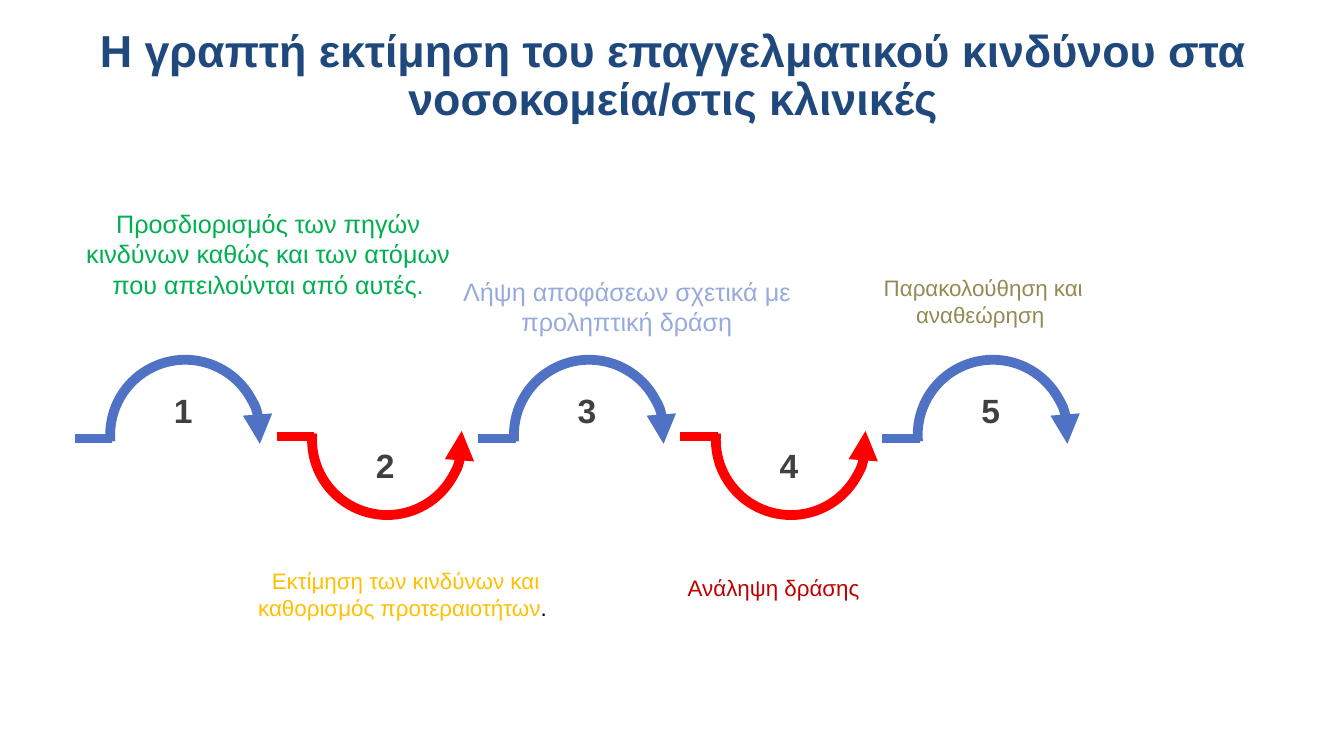
from lxml.etree import SubElement
from pptx import Presentation
from pptx.dml.color import RGBColor
from pptx.enum.shapes import MSO_CONNECTOR, MSO_SHAPE
from pptx.enum.text import MSO_ANCHOR, PP_ALIGN
from pptx.oxml.ns import qn
from pptx.util import Pt

NAVY = RGBColor(0x1F, 0x49, 0x7D)
BLUE = RGBColor(0x50, 0x72, 0xC4)
RED = RGBColor(0xFF, 0x00, 0x00)
GRAY = RGBColor(0x40, 0x40, 0x40)
GREEN = RGBColor(0x00, 0xB0, 0x50)
AMBER = RGBColor(0xFF, 0xC0, 0x00)
LIGHT_BLUE = RGBColor(0x96, 0xAA, 0xDC)
DARK_RED = RGBColor(0xC0, 0x00, 0x00)
OLIVE = RGBColor(0x94, 0x8A, 0x54)
BLACK = RGBColor(0x00, 0x00, 0x00)

TITLE = "Η γραπτή εκτίμηση του επαγγελματικού κινδύνου στα νοσοκομεία/στις κλινικές"

# Step captions: left, top, width, height, size, runs of (text, colour)
CAPTIONS = [
    (46.1, 145.4, 290.9, 72.7, 18,
     [("Προσδιορισμός των πηγών κινδύνων καθώς και των ατόμων που απειλούνται από αυτές.", GREEN)]),
    (146.9, 401.8, 285.8, 46.1, 16,
     [("Εκτίμηση των κινδύνων και καθορισμός προτεραιοτήτων", AMBER), (". ", BLACK)]),
    (321.1, 193.7, 253.4, 51.1, 18,
     [("Λήψη αποφάσεων σχετικά με προληπτική δράση", LIGHT_BLUE)]),
    (483.1, 406.8, 139, 26.6, 16, [("Ανάληψη δράσης", DARK_RED)]),
    (594.7, 192.2, 215.3, 46.1, 16, [("Παρακολούθηση και αναθεώρηση ", OLIVE)]),
]

FIRST_ARC_LEFT = 78.7
STEP_PITCH = 144.2
ARC_SIZE = 107.3
LINE_WIDTH = 7

# Alternating steps: the arc opens down (upper) or up (lower)
UPPER = {"color": BLUE, "arc_top": 257, "line_y": 313.2, "number_top": 275, "flips": ("flipH",)}
LOWER = {"color": RED, "arc_top": 260.6, "line_y": 311.8, "number_top": 314, "flips": ("flipH", "flipV")}


def apply_format(target, values):
    for name, value in values.items():
        setattr(target, name, value)


def add_text(slide, box, runs, size, bold=False, frame_format=None, paragraph_format=None):
    text_box = slide.shapes.add_textbox(*map(Pt, box))
    frame = text_box.text_frame
    apply_format(frame, {"word_wrap": True, **(frame_format or {})})
    paragraph = frame.paragraphs[0]
    apply_format(paragraph, {"alignment": PP_ALIGN.CENTER, **(paragraph_format or {})})
    for text, color in runs:
        run = paragraph.add_run()
        run.text = text
        apply_format(run.font, {"name": "Arial", "size": Pt(size), "bold": bold})
        run.font.color.rgb = color


def style_line(line, color):
    line.color.rgb = color
    line.width = Pt(LINE_WIDTH)


def add_arc_arrow(slide, left, top, color, flips):
    arc = slide.shapes.add_shape(MSO_SHAPE.ARC, *map(Pt, (left, top, ARC_SIZE, ARC_SIZE)))
    arc.shadow.inherit = False
    arc.adjustments[0] = 103.882
    arc.adjustments[1] = 3.018
    arc.fill.background()
    style_line(arc.line, color)
    properties = arc.element.spPr
    for flip in flips:
        properties.find(qn("a:xfrm")).set(flip, "1")
    SubElement(properties.find(qn("a:ln")), qn("a:headEnd"), type="triangle")


def add_lead_line(slide, start, end, y, color):
    connector = slide.shapes.add_connector(MSO_CONNECTOR.STRAIGHT, Pt(start), Pt(y), Pt(end), Pt(y))
    style_line(connector.line, color)
    SubElement(connector.element.spPr, qn("a:effectLst"))


def add_step(slide, number):
    style = UPPER if number % 2 else LOWER
    left = FIRST_ARC_LEFT + (number - 1) * STEP_PITCH
    add_arc_arrow(slide, left, style["arc_top"], style["color"], style["flips"])
    add_lead_line(slide, left + 1.5, left - 25.3, style["line_y"], style["color"])
    add_text(slide, (left - 0.8, style["number_top"], 106, 36), [(str(number), GRAY)], 24, bold=True)


def main():
    presentation = Presentation()
    apply_format(presentation, {"slide_width": Pt(960), "slide_height": Pt(540)})
    slide = presentation.slides.add_slide(presentation.slide_layouts[6])

    # Title
    add_text(slide, (25.2, 26.6, 911.5, 56.9), [(TITLE, NAVY)], 32, bold=True,
             frame_format={"vertical_anchor": MSO_ANCHOR.MIDDLE},
             paragraph_format={"line_spacing": 0.9, "space_before": Pt(10)})

    # Chain of numbered arrows
    for number in range(1, len(CAPTIONS) + 1):
        add_step(slide, number)

    # Captions
    for *box, size, runs in CAPTIONS:
        add_text(slide, box, runs, size)

    presentation.save("out.pptx")


if __name__ == "__main__":
    main()
